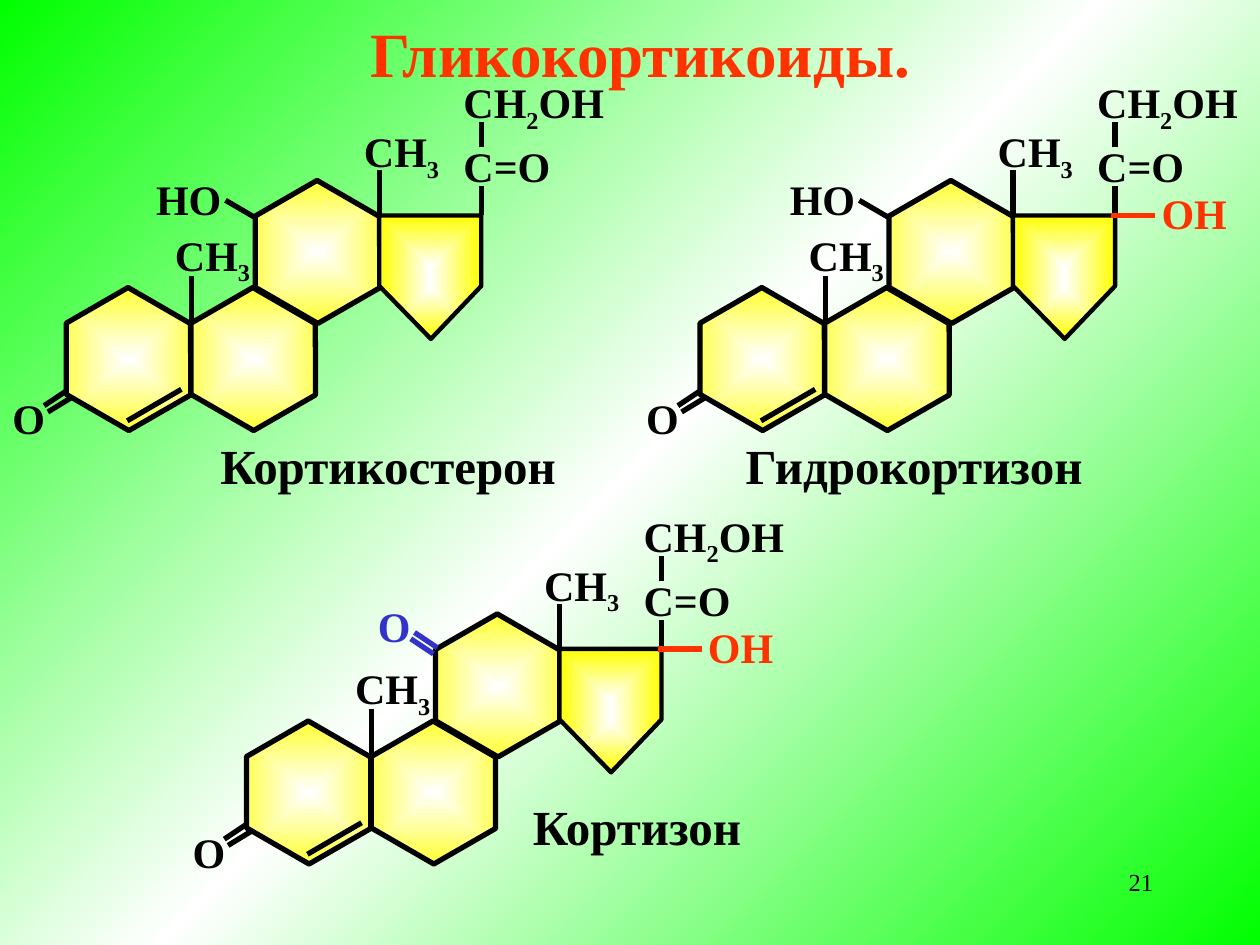
"""Builds a slide with the structural formulas of three glucocorticoids."""
from copy import deepcopy
from itertools import groupby

from lxml.etree import SubElement
from pptx import Presentation
from pptx.dml.color import RGBColor
from pptx.enum.shapes import MSO_CONNECTOR as Connector, MSO_SHAPE as Shape
from pptx.enum.text import MSO_ANCHOR as Anchor, MSO_AUTO_SIZE as AutoSize, PP_ALIGN as Align
from pptx.oxml.ns import qn
from pptx.util import Inches, Pt

COLORS = {"black": "000000", "white": "FFFFFF", "yellow": "FFFF00",
          "green": "00FF00", "red": "FF3300", "blue": "3333CC"}
FONT = "Times New Roman"

HEXAGONS = [(0.45, 2.36), (1.44, 2.36), (1.95, 1.51)]
PENTAGON = [(3.42, 2.69), (3.82, 2.27), (3.82, 1.71), (3.01, 1.71), (3.01, 2.27)]
BONDS = [(1.01, 3.34, 1.44, 3.09), (0.53, 3.1, 0.35, 3.22), (0.56, 3.16, 0.38, 3.27),
         (1.52, 2.55, 1.52, 2.19), (3.01, 1.72, 3.01, 1.35),
         (3.82, 1.71, 3.82, 1.48), (3.82, 1.17, 3.82, 0.97)]
ATOMS = [("О", 0, 3.07, 0.46), ("СН3", 1.29, 1.77, 0.81), ("СН3", 2.79, 0.95, 0.81),
         ("СН2ОН", 3.58, 0.56, 1.33), ("С=О", 3.58, 1.07, 0.89)]
HYDROXYL_11 = {"color": "black", "bonds": [(2.03, 1.73, 1.79, 1.59)],
               "atom": ("НО", 1.14, 1.33, 0.72)}
KETONE_11 = {"color": "blue", "bonds": [(2.01, 1.75, 1.83, 1.63), (2.04, 1.7, 1.86, 1.58)],
             "atom": ("О", 1.47, 1.28, 0.46)}
HYDROXYL_17 = {"color": "red", "bonds": [(3.79, 1.71, 4.14, 1.71)],
               "atom": ("ОН", 4.09, 1.44, 0.72)}
MOLECULES = [
    ((0, 0), ("Кортикостерон", 1.65, 3.41, 2.9), [HYDROXYL_11]),
    ((5.03, 0), ("Гидрокортизон", 0.79, 3.41, 2.91), [HYDROXYL_17, HYDROXYL_11]),
    ((1.43, 3.44), ("Кортизон", 2.7, 2.83, 1.88), [HYDROXYL_17, KETONE_11]),
]


def rgb(name):
    """Returns the named colour."""
    return RGBColor.from_string(COLORS[name])


class FormulaSlide:
    """Draws chemical formulas on one slide in a common style."""

    def __init__(self, deck):
        """Adds a title-only page."""
        self.page = deck.slides.add_slide(deck.slide_layouts[5])
        self.canvas = self.page.shapes
        self.origin = (0, 0)

    def place(self, x, y):
        """Shifts a point by the origin of the current molecule."""
        return Inches(self.origin[0] + x), Inches(self.origin[1] + y)

    def background(self):
        """Paints the diagonal green and white background."""
        fill = self.page.background.fill
        fill.gradient()
        fill.gradient_angle = 315
        stops = self.page.element.find(".//" + qn("a:gsLst"))
        stops.append(deepcopy(stops[-1]))
        for stop, position, name in zip(fill.gradient_stops, (0, 0.5, 1),
                                        ("green", "white", "green")):
            stop.position, stop.color.rgb = position, rgb(name)

    def add_text(self, frame, text, size, color="black", bold=True, align=Align.LEFT):
        """Adds text to a frame, lowering the digits inside a formula."""
        para = frame.paragraphs[0]
        para.alignment = align
        style = {"name": FONT, "size": Pt(size), "bold": bold}
        for is_digit, letters in groupby(text, str.isdigit):
            span = para.add_run()
            span.text = "".join(letters)
            for key, value in style.items():
                setattr(span.font, key, value)
            span.font.color.rgb = rgb(color)
            if is_digit and not text.isdigit():
                span.font._element.set("baseline", "-25000")

    def title(self, text):
        """Fills the title placeholder."""
        box = self.page.shapes.title
        frame_format = {"left": 0.83, "top": 0, "width": 8.5, "height": 0.83}
        for key, value in frame_format.items():
            setattr(box, key, Inches(value))
        box.text_frame.auto_size = AutoSize.NONE
        box.text_frame.vertical_anchor = Anchor.MIDDLE
        self.add_text(box.text_frame, text, 36, "red", align=Align.CENTER)

    def label(self, text, x, y, width, height=0.5, size=24, wrap=False, **style):
        """Adds a text box."""
        box = self.canvas.add_textbox(*self.place(x, y), Inches(width), Inches(height))
        box.text_frame.word_wrap = wrap
        box.text_frame.auto_size = AutoSize.NONE if wrap else AutoSize.SHAPE_TO_FIT_TEXT
        self.add_text(box.text_frame, text, size, **style)

    def bond(self, x1, y1, x2, y2, color="black"):
        """Adds a bond line."""
        line = self.canvas.add_connector(Connector.STRAIGHT, *self.place(x1, y1),
                                         *self.place(x2, y2))
        line.line.color.rgb = rgb(color)
        line.line.width = Pt(3)
        SubElement(line.element.spPr, qn("a:effectLst"))

    def paint_ring(self, ring, path_kind, width):
        """Gives a ring its glow from the centre and its outline."""
        ring.shadow.inherit = False
        ring.line.color.rgb = rgb("black")
        ring.line.width = Pt(width)
        ring.fill.gradient()
        for stop, position, name in zip(ring.fill.gradient_stops, (0, 1), ("white", "yellow")):
            stop.position, stop.color.rgb = position, rgb(name)
        gradient = ring.element.spPr.find(qn("a:gradFill"))
        gradient.set("rotWithShape", "0")
        gradient.remove(gradient.find(qn("a:lin")))
        glow = SubElement(gradient, qn("a:path"), {"path": path_kind})
        center = SubElement(glow, qn("a:fillToRect"))
        for side in "ltrb":
            center.set(side, "50000")

    def hexagon(self, x, y):
        """Adds a six-membered ring."""
        ring = self.canvas.add_shape(Shape.HEXAGON, *self.place(x, y), Inches(1.14), Inches(0.98))
        ring.adjustments[0] = 0.289
        ring.rotation = 30
        self.paint_ring(ring, "shape", 3)

    def pentagon(self, corners):
        """Adds a five-membered ring."""
        start, *others = [self.place(*corner) for corner in corners]
        builder = self.canvas.build_freeform(*start)
        builder.add_line_segments(others, close=True)
        self.paint_ring(builder.convert_to_shape(), "rect", 2.5)

    def molecule(self, origin, name, substituents):
        """Draws the steroid skeleton with its substituents and name."""
        self.origin = origin
        self.canvas = self.page.shapes.add_group_shape().shapes
        for corner in HEXAGONS:
            self.hexagon(*corner)
        self.pentagon(PENTAGON)
        for ends in BONDS:
            self.bond(*ends)
        for atom in ATOMS:
            self.label(*atom)
        for part in substituents:
            for ends in part["bonds"]:
                self.bond(*ends, color=part["color"])
            self.label(*part["atom"], color=part["color"])
        self.label(*name, height=0.57, size=28)


def main():
    """Builds and saves the deck."""
    deck = Presentation()
    deck.slide_width, deck.slide_height = Inches(10), Inches(7.5)
    slide = FormulaSlide(deck)
    slide.background()
    slide.title("Гликокортикоиды.")
    slide.label("21", 7.17, 6.83, 2.08, size=14, wrap=True, bold=False, align=Align.RIGHT)
    for molecule in MOLECULES:
        slide.molecule(*molecule)
    deck.save("out.pptx")


if __name__ == "__main__":
    main()
